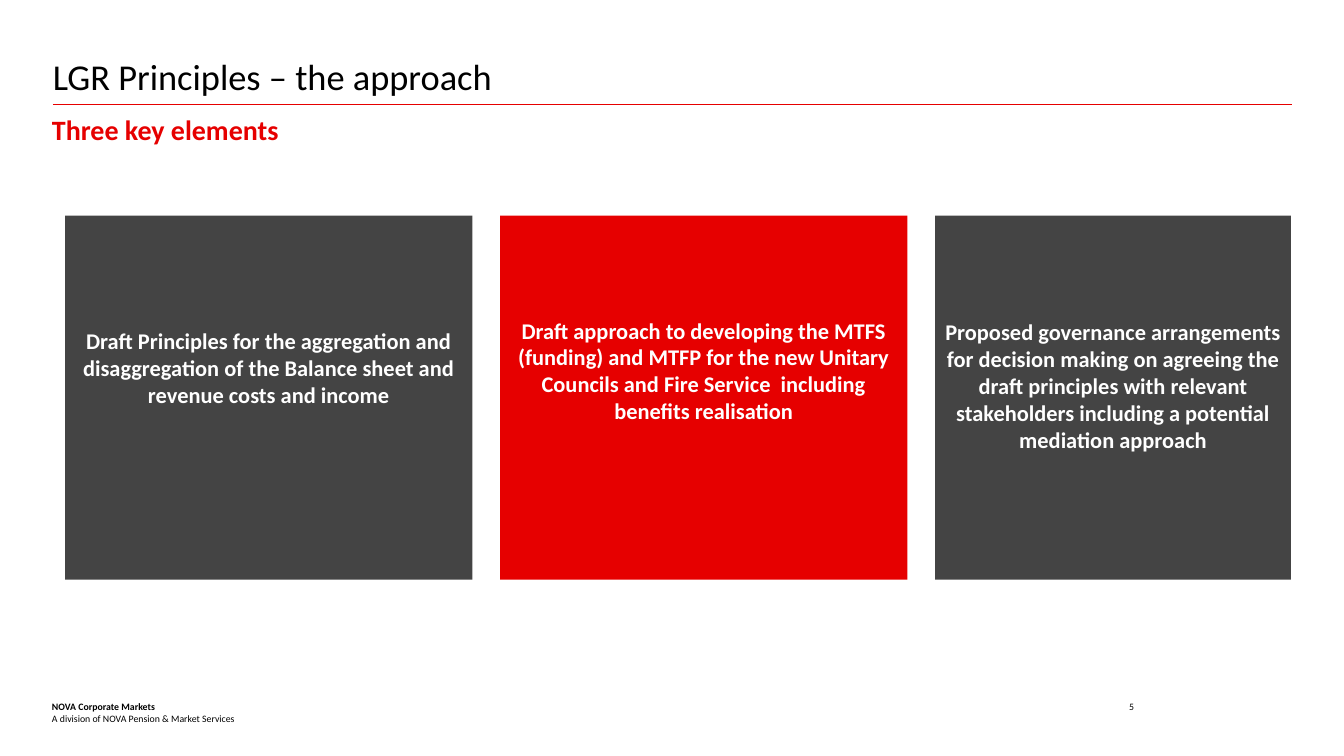
from lxml import etree
from pptx import Presentation
from pptx.dml.color import RGBColor
from pptx.enum import shapes, text
from pptx.oxml import ns
from pptx.util import Cm, Pt

# Content
TITLE = "LGR Principles – the approach"
SUBTITLE = "Three key elements"
FOOTER = ["NOVA Corporate Markets", "A division of NOVA Pension & Market Services"]
PAGE = "5"
BLACK, WHITE, RED, GREY = "000000", "FFFFFF", "E60000", "444444"

# Text, fill, width in cm, how far the text area stops above the panel's bottom
PANELS = [
    ("Draft Principles for the aggregation and disaggregation of the Balance "
     "sheet and revenue costs and income", GREY, 20.52, 3.13),
    ("Draft approach to developing the MTFS (funding) and MTFP for the new "
     "Unitary Councils and Fire Service  including benefits realisation",
     RED, 20.52, 2.87),
    ("Proposed governance arrangements for decision making on agreeing the "
     "draft principles with relevant stakeholders including a potential "
     "mediation approach", GREY, 17.93, 1.32),
]

# Layout in cm
LEFT, CONTENT_WIDTH = 2.67, 62.41
PANEL_LEFT, PANEL_TOP, PANEL_HEIGHT, PANEL_GAP = 3.28, 10.87, 18.34, 1.4


def rgb(colour):
    return RGBColor.from_string(colour)


def style(paragraph, size, colour, bold=False, align=text.PP_ALIGN.LEFT):
    paragraph.alignment = align
    font = paragraph.font
    font.name, font.size, font.bold = "Calibri", Pt(size), bold
    font.color.rgb = rgb(colour)


def prepare(frame):
    frame.word_wrap = True
    frame.auto_size = text.MSO_AUTO_SIZE.NONE
    frame.vertical_anchor = text.MSO_ANCHOR.TOP
    frame.margin_left = frame.margin_right = 0
    frame.margin_top = frame.margin_bottom = 0


def add_text(slide, lines, left, top, width, height):
    box = slide.shapes.add_textbox(Cm(left), Cm(top), Cm(width), Cm(height))
    prepare(box.text_frame)
    box.text_frame.text = "\n".join(lines)
    return box.text_frame.paragraphs


def add_panel(slide, wording, fill, left, width, bottom_margin):
    panel = slide.shapes.add_shape(
        shapes.MSO_SHAPE.RECTANGLE,
        Cm(left), Cm(PANEL_TOP), Cm(width), Cm(PANEL_HEIGHT))
    panel.shadow.inherit = False
    panel.fill.solid()
    panel.fill.fore_color.rgb = rgb(fill)
    panel.line.fill.background()
    frame = panel.text_frame
    frame.word_wrap = True
    frame.vertical_anchor = text.MSO_ANCHOR.MIDDLE
    frame.margin_bottom = Cm(bottom_margin)
    frame.text = wording
    style(frame.paragraphs[0], 32, WHITE, True, text.PP_ALIGN.CENTER)


def main():
    prs = Presentation()
    prs.slide_width, prs.slide_height = Cm(67.72), Cm(38.1)
    slide = prs.slides.add_slide(prs.slide_layouts[5])

    # Title, rule and subtitle
    title = slide.shapes.title
    title.left, title.top = Cm(LEFT), Cm(2.82)
    title.width, title.height = Cm(CONTENT_WIDTH), Cm(1.65)
    prepare(title.text_frame)
    title.text_frame.text = TITLE
    heading = title.text_frame.paragraphs[0]
    heading.line_spacing = Pt(60)
    style(heading, 52, BLACK)

    rule = slide.shapes.add_connector(
        shapes.MSO_CONNECTOR.STRAIGHT,
        Cm(LEFT), Cm(5.28), Cm(LEFT + CONTENT_WIDTH), Cm(5.28))
    rule.line.color.rgb = rgb(RED)
    rule.line.width = Pt(1.5)
    etree.SubElement(rule._element.spPr, ns.qn("a:effectLst"))

    subtitle, = add_text(slide, [SUBTITLE], 2.62, 5.66, CONTENT_WIDTH, 2.03)
    style(subtitle, 40, RED, True)

    # Panels, left to right with equal gaps
    left = PANEL_LEFT
    for wording, fill, width, bottom_margin in PANELS:
        add_panel(slide, wording, fill, left, width, bottom_margin)
        left += width + PANEL_GAP

    # Footer and page number
    company, division = add_text(slide, FOOTER, 2.62, 35.31, 14.99, 1.3)
    style(company, 14, BLACK, True)
    style(division, 14, BLACK)
    page, = add_text(slide, [PAGE], 50.06, 35.31, 7.09, 0.99)
    style(page, 14, BLACK, align=text.PP_ALIGN.RIGHT)

    prs.save("out.pptx")


if __name__ == "__main__":
    main()
